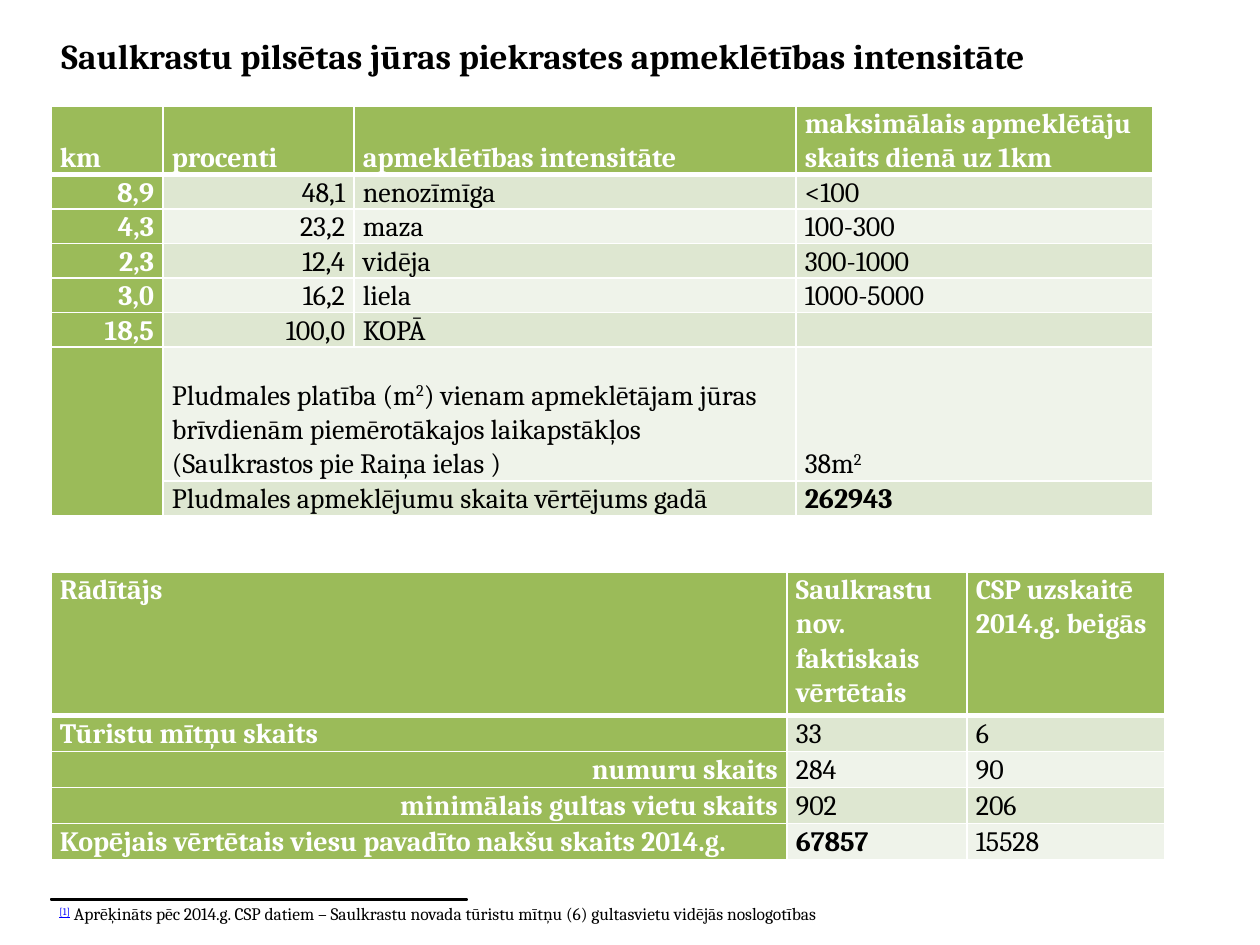
import lxml.etree
import pptx
import pptx.dml.color
import pptx.enum.shapes
import pptx.enum.text
import pptx.oxml.ns
import pptx.util

PX = 914400 // 126
FONT = "Cambria"
COLORS = {
    "header": "9BBB59", "odd": "DEE7D1", "even": "EFF3EA",
    "white": "FFFFFF", "black": "000000", "link": "0000FF",
}
ALIGN = pptx.enum.text.PP_ALIGN
ANCHOR = pptx.enum.text.MSO_ANCHOR
qn = pptx.oxml.ns.qn

INTENSITY = [
    ["km", "procenti", "apmeklētības intensitāte",
     "maksimālais apmeklētāju skaits dienā uz 1km"],
    ["8,9", "48,1", "nenozīmīga", "<100"],
    ["4,3", "23,2", "maza", "100-300"],
    ["2,3", "12,4", "vidēja", "300-1000"],
    ["3,0", "16,2", "liela", "1000-5000"],
    ["18,5", "100,0", "KOPĀ", ""],
    ["", "Pludmales platība (m^2^) vienam apmeklētājam jūras brīvdienām "
     "piemērotākajos laikapstākļos (Saulkrastos pie Raiņa ielas )", "", "38m^2^"],
    ["", "Pludmales apmeklējumu skaita vērtējums gadā", "", "262943"],
]
LODGING = [
    ["Rādītājs", "Saulkrastu nov. faktiskais vērtētais", "CSP uzskaitē 2014.g. beigās"],
    ["Tūristu mītņu skaits", "33", "6"],
    ["numuru skaits", "284", "90"],
    ["minimālais gultas vietu skaits", "902", "206"],
    ["Kopējais vērtētais viesu pavadīto nakšu skaits 2014.g.", "67857", "15528"],
]
BOLD_TOTALS = {"262943", "67857"}


def px(n):
    return pptx.util.Emu(n * PX)


def rgb(name):
    return pptx.dml.color.RGBColor.from_string(COLORS[name])


def write(p, text, size=16, color="black", bold=False, underline=False):
    """Append text to a paragraph; parts between ^ marks are superscript."""
    for i, part in enumerate(text.split("^")):
        if not part:
            continue
        r = p.add_run()
        r.text = part
        r.font.name = FONT
        r.font.size = pptx.util.Pt(size)
        r.font.bold = bold
        r.font.underline = underline
        r.font.color.rgb = rgb(color)
        if i % 2:
            r._r.get_or_add_rPr().set("baseline", "30000")


def add_textbox(s, x, y, w, h, anchor=ANCHOR.TOP):
    """Add a wrapping text box and return its first paragraph."""
    tf = s.shapes.add_textbox(px(x), px(y), px(w), px(h)).text_frame
    tf.word_wrap = True
    tf.vertical_anchor = anchor
    return tf.paragraphs[0]


def set_borders(cell, bottom):
    tc_pr = cell._tc.get_or_add_tcPr()
    widths = {"lnL": 1, "lnR": 1, "lnT": 1, "lnB": bottom}
    for i, (tag, width) in enumerate(widths.items()):
        ln = lxml.etree.Element(qn("a:" + tag), w=str(width * 12700))
        fill = lxml.etree.SubElement(ln, qn("a:solidFill"))
        lxml.etree.SubElement(fill, qn("a:srgbClr"), val=COLORS["white"])
        tc_pr.insert(i, ln)


def fill_cell(cell, text, row, col, align, anchor):
    is_header = row == 0 or col == 0
    cell.margin_left = cell.margin_right = px(9)
    cell.margin_top = cell.margin_bottom = 0
    cell.vertical_anchor = anchor
    cell.fill.solid()
    cell.fill.fore_color.rgb = rgb(
        "header" if is_header else "odd" if row % 2 else "even")
    set_borders(cell, 1 if row else 3)
    p = cell.text_frame.paragraphs[0]
    p.line_spacing = 1.07
    p.alignment = align
    if text:
        write(p, text, color="white" if is_header else "black",
              bold=is_header or text in BOLD_TOTALS)
    else:
        lxml.etree.SubElement(p._p, qn("a:endParaRPr"), sz="1600")


def add_table(s, x, y, widths, heights, data, align, anchor=ANCHOR.TOP):
    """Add a banded table; align(row, col) gives each cell's alignment."""
    table = s.shapes.add_table(len(heights), len(widths), px(x), px(y),
                               px(sum(widths)), px(sum(heights))).table
    for column, width in zip(table.columns, widths):
        column.width = px(width)
    for row, height in zip(table.rows, heights):
        row.height = px(height)
    for i, values in enumerate(data):
        for j, text in enumerate(values):
            fill_cell(table.cell(i, j), text, i, j, align(i, j), anchor)
    return table


def intensity_align(row, col):
    return ALIGN.RIGHT if 1 <= row <= 5 and col < 2 else ALIGN.LEFT


def lodging_align(row, col):
    if row and col:
        return ALIGN.JUSTIFY
    return ALIGN.RIGHT if row in (2, 3) else ALIGN.LEFT


def add_rule(s, x, y, w, h):
    rule = s.shapes.add_shape(pptx.enum.shapes.MSO_SHAPE.RECTANGLE,
                              px(x), px(y), px(w), px(h))
    rule.shadow.inherit = False
    rule.fill.solid()
    rule.fill.fore_color.rgb = rgb("black")
    rule.line.color.rgb = rgb("black")
    rule.line.width = pptx.util.Pt(0.75)


def main():
    prs = pptx.Presentation()
    prs.slide_width, prs.slide_height = px(1260), px(945)
    s = prs.slides.add_slide(prs.slide_layouts[6])

    table = add_table(s, 51, 106, [112, 191, 442, 357], [67] + [34] * 5 + [134, 34],
                      INTENSITY, intensity_align, ANCHOR.BOTTOM)
    table.cell(6, 0).merge(table.cell(7, 0))
    for row in (6, 7):
        table.cell(row, 1).merge(table.cell(row, 2))

    write(add_textbox(s, 49, 28, 1052, 55),
          "Saulkrastu pilsētas jūras piekrastes apmeklētības intensitāte",
          size=20, bold=True)

    add_table(s, 51, 572, [736, 180, 198], [143] + [36] * 4, LODGING, lodging_align)

    add_rule(s, 51, 899, 416, 1)
    p = add_textbox(s, 47, 897, 842, 34, ANCHOR.MIDDLE)
    write(p, "^[1]^", size=10, color="link", underline=True)
    write(p, " Aprēķināts pēc 2014.g. CSP datiem – Saulkrastu novada tūristu mītņu (6) "
          "gultasvietu vidējās noslogotības", size=10)

    prs.save("out.pptx")


if __name__ == "__main__":
    main()
